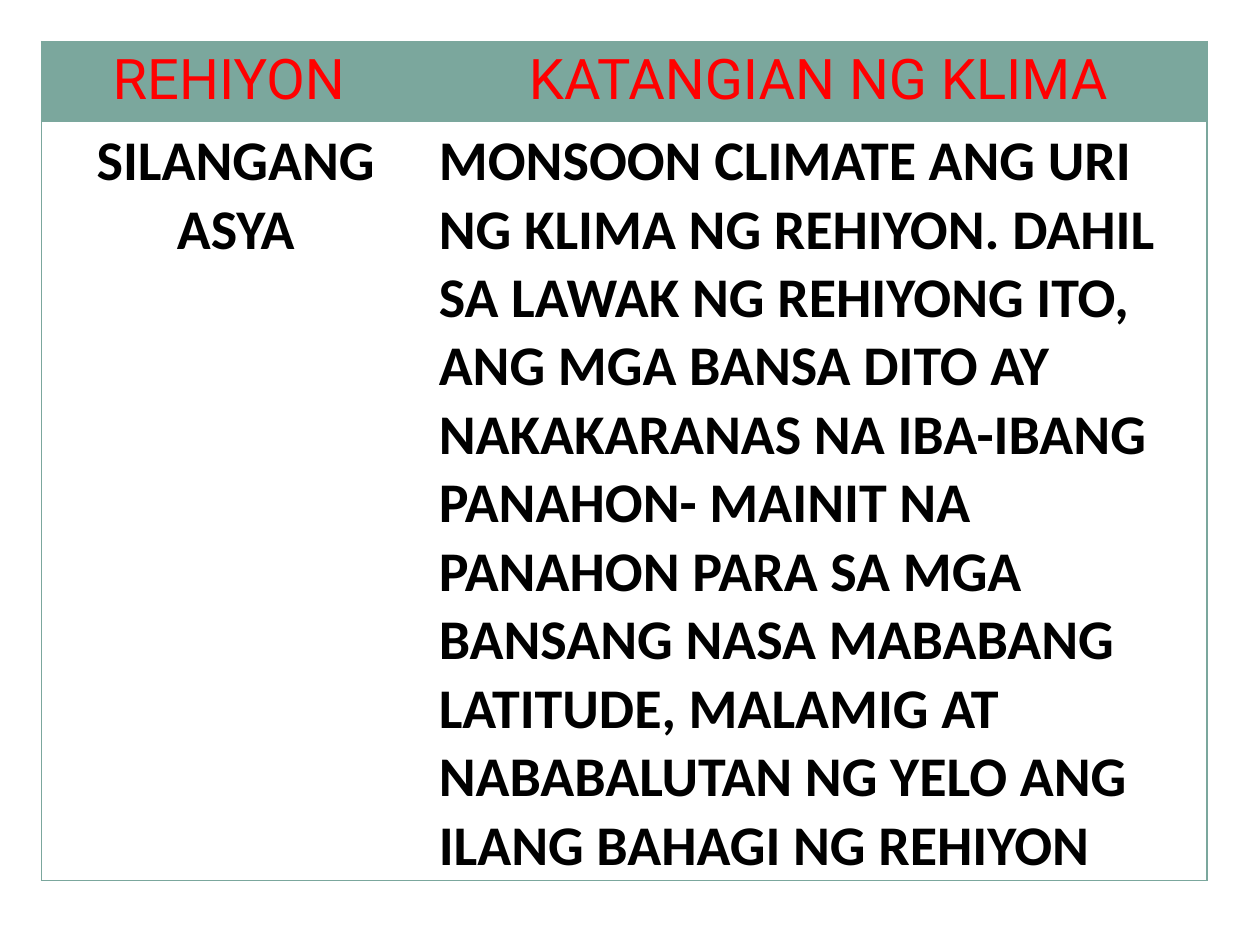
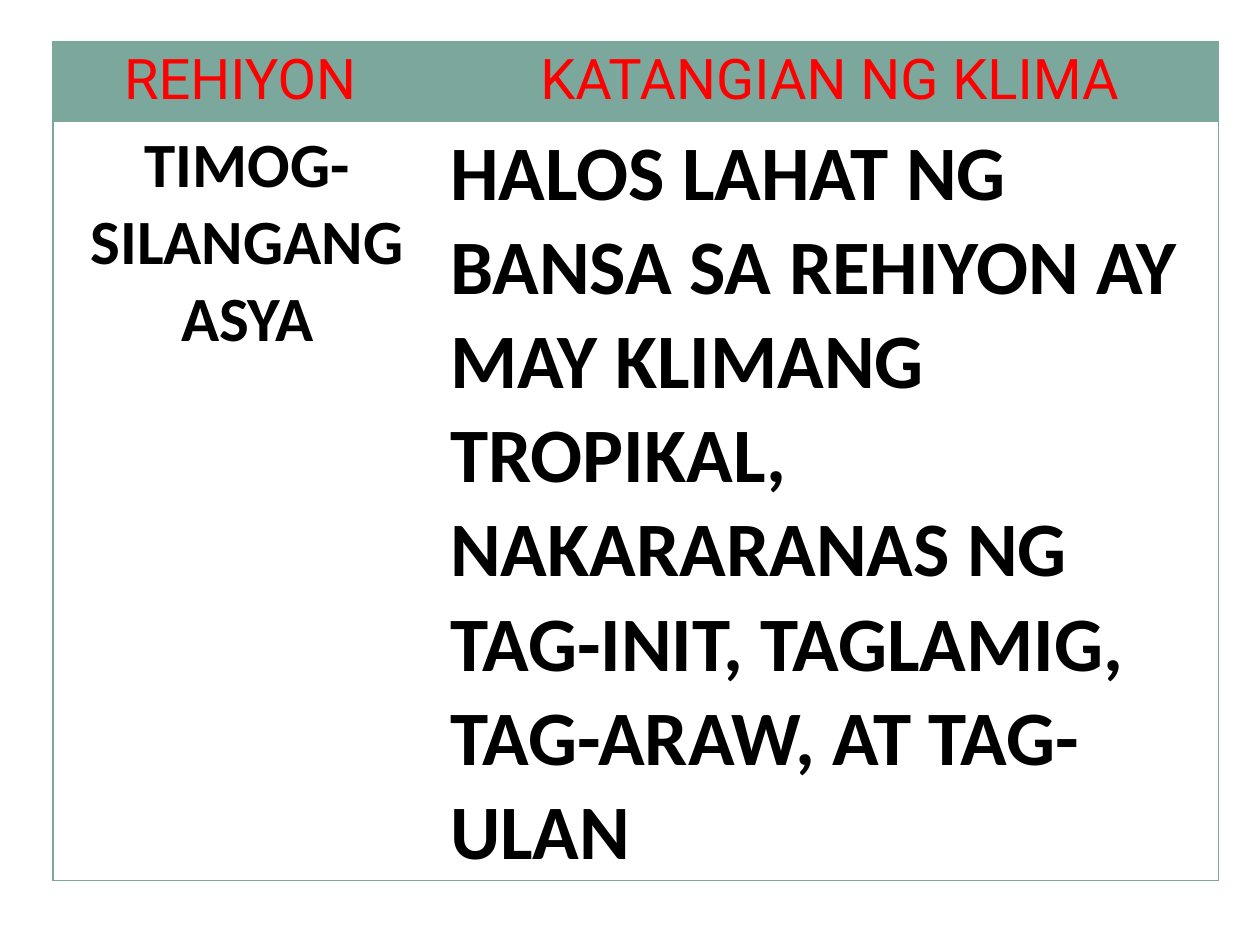
from dataclasses import dataclass

from lxml import etree
from pptx import Presentation
from pptx.dml.color import RGBColor
from pptx.enum import text
from pptx.oxml import ns
from pptx.util import Inches, Pt


@dataclass(frozen=True)
class Theme:
    """Colours, fonts, type sizes and measures shared by the slides."""

    sage: str = "7BA79D"
    red: str = "FF0000"
    black: str = "000000"
    head_font: str = "Roboto"
    body_font: str = "Calibri"
    head_size: int = 32
    rule: float = 0.79
    side_margin: float = 0.07
    top_margin: float = 0.05


@dataclass(frozen=True)
class Style:
    """Look of the words in one cell."""

    font: str
    size: int
    color: str
    bold: bool
    align: text.PP_ALIGN


@dataclass(frozen=True)
class Region:
    """One region, its climate, and the type sizes of both."""

    left: float
    name: str
    climate: str
    name_size: int
    climate_size: int


THEME = Theme()
WIDTH, HEIGHT = 10, 7.5
TOP = 0.33
TABLE_WIDTH = 9.25
COLUMNS = (TABLE_WIDTH / 3, TABLE_WIDTH * 2 / 3)
ROWS = (0.63, 5.97)
HEADINGS = ("REHIYON ", "KATANGIAN NG KLIMA")
REGIONS = (
    Region(
        0.33,
        "SILANGANG ASYA",
        "MONSOON CLIMATE ANG URI NG KLIMA NG REHIYON. DAHIL SA LAWAK NG "
        "REHIYONG ITO, ANG MGA BANSA DITO AY NAKAKARANAS NA IBA-IBANG "
        "PANAHON- MAINIT NA PANAHON PARA SA MGA BANSANG NASA MABABANG "
        "LATITUDE, MALAMIG AT NABABALUTAN NG YELO ANG ILANG BAHAGI NG REHIYON",
        32,
        32,
    ),
    Region(
        0.42,
        "TIMOG-SILANGANG ASYA",
        "HALOS LAHAT NG BANSA SA REHIYON AY MAY KLIMANG TROPIKAL, NAKARARANAS "
        "NG TAG-INIT, TAGLAMIG, TAG-ARAW, AT TAG-ULAN",
        36,
        44,
    ),
)


def write(cell, words: str, style: Style) -> None:
    """Put one styled run into a cell."""
    cell.margin_left = cell.margin_right = Inches(THEME.side_margin)
    cell.margin_top, cell.margin_bottom = Inches(THEME.top_margin), 0
    para = cell.text_frame.paragraphs[0]
    para.alignment = style.align
    span = para.add_run()
    span.text = words
    span.font.name = style.font
    span.font.size = Pt(style.size)
    span.font.bold = style.bold
    span.font.color.rgb = RGBColor.from_string(style.color)


def outline(cell, sides: str) -> None:
    """Rule the named sides of a cell and clear the others."""
    props = cell._tc.get_or_add_tcPr()
    for index, side in enumerate("LRTB"):
        line = etree.Element(ns.qn(f"a:ln{side}"), w=str(Pt(THEME.rule)))
        if side in sides:
            fill = etree.SubElement(line, ns.qn("a:solidFill"))
            etree.SubElement(fill, ns.qn("a:srgbClr"), val=THEME.sage)
        else:
            etree.SubElement(line, ns.qn("a:noFill"))
        props.insert(index, line)


def add_region(deck, region: Region) -> None:
    """Add a slide with the climate table of one region."""
    page = deck.slides.add_slide(deck.slide_layouts[6])
    frame = page.shapes.add_table(
        2, 2, Inches(region.left), Inches(TOP), Inches(TABLE_WIDTH), Inches(sum(ROWS))
    )
    table = frame.table
    table.first_row = table.horz_banding = False
    for column, width in zip(table.columns, COLUMNS):
        column.width = Inches(width)
    for row, height in zip(table.rows, ROWS):
        row.height = Inches(height)

    center, left = text.PP_ALIGN.CENTER, text.PP_ALIGN.LEFT
    heading = Style(THEME.head_font, THEME.head_size, THEME.red, False, center)
    name = Style(THEME.body_font, region.name_size, THEME.black, True, center)
    climate = Style(THEME.body_font, region.climate_size, THEME.black, True, left)
    content = zip(HEADINGS, (region.name, region.climate), (name, climate), "LR")
    for index, (title, words, style, edge) in enumerate(content):
        head, body = table.cell(0, index), table.cell(1, index)
        head.fill.solid()
        head.fill.fore_color.rgb = RGBColor.from_string(THEME.sage)
        body.fill.background()
        write(head, title, heading)
        write(body, words, style)
        outline(head, edge + "TB")
        outline(body, edge + "TB")


def main() -> None:
    """Build and save the deck."""
    deck = Presentation()
    deck.slide_width, deck.slide_height = Inches(WIDTH), Inches(HEIGHT)
    for region in REGIONS:
        add_region(deck, region)
    deck.save("out.pptx")


if __name__ == "__main__":
    main()
